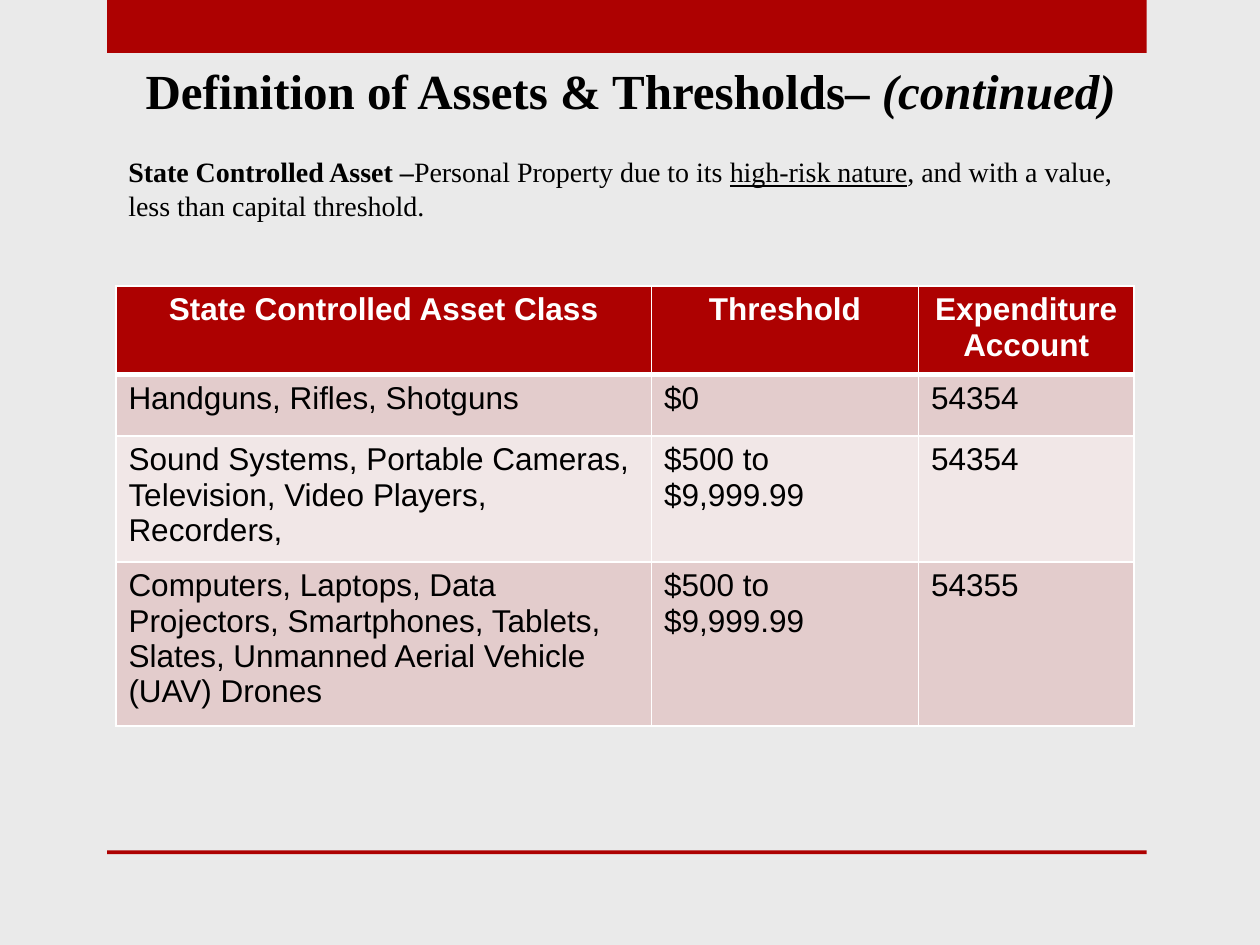
from typing import NamedTuple

from lxml import etree
from pptx import Presentation
from pptx import util as u
from pptx.dml.color import RGBColor
from pptx.enum import shapes, text
from pptx.oxml import ns

RED, WHITE, BLACK = "AD0101", "FFFFFF", "000000"
BANDS = ("E3CCCC", "F1E7E7")
SERIF, SANS = "Times New Roman", "Arial"
COL_WIDTHS = (4.25, 2.12, 1.71)
ROW_HEIGHTS = (0.69, 0.49, 1.0, 1.3)
ROWS = (
    ("State Controlled Asset Class", "Threshold", "Expenditure Account"),
    ("Handguns, Rifles, Shotguns", "$0", "54354"),
    ("Sound Systems, Portable Cameras, Television, Video Players, Recorders,",
     "$500 to $9,999.99", "54354"),
    ("Computers, Laptops, Data Projectors, Smartphones, Tablets, Slates, "
     "Unmanned Aerial Vehicle (UAV) Drones", "$500 to $9,999.99", "54355"),
)


class Run(NamedTuple):
    text: str
    bold: bool = False
    italic: bool = False
    underline: bool = False


def paint(fill, color: str) -> None:
    fill.solid()
    fill.fore_color.rgb = RGBColor.from_string(color)


def style(font, name: str, size: float, color: str, bold: bool) -> None:
    font.name, font.size, font.bold = name, u.Pt(size), bold
    font.color.rgb = RGBColor.from_string(color)


def add_bar(s, top: float, height: float) -> None:
    sp = s.shapes.add_shape(shapes.MSO_SHAPE.RECTANGLE, u.Inches(0.85),
                            u.Inches(top), u.Inches(8.25), u.Inches(height))
    sp.shadow.inherit = False
    paint(sp.fill, RED)
    sp.line.fill.background()


def add_text(s, top: float, height: float, size: float, runs: list[Run],
             align=text.PP_ALIGN.LEFT) -> None:
    sp = s.shapes.add_textbox(u.Inches(0.92), u.Inches(top),
                              u.Inches(8.17), u.Inches(height))
    tf = sp.text_frame
    tf.word_wrap = True
    p = tf.paragraphs[0]
    p.alignment = align
    for run in runs:
        r = p.add_run()
        r.text = run.text
        style(r.font, SERIF, size, BLACK, run.bold)
        r.font.italic, r.font.underline = run.italic, run.underline


def set_borders(cell, top: float, bottom: float) -> None:
    """Draw white cell borders; top and bottom are widths in points."""
    tc_pr = cell._tc.get_or_add_tcPr()
    widths = {"lnL": 1, "lnR": 1, "lnT": top, "lnB": bottom}
    for i, (side, width) in enumerate(widths.items()):
        ln = etree.Element(ns.qn(f"a:{side}"), w=str(u.Pt(width)))
        fill = etree.SubElement(ln, ns.qn("a:solidFill"))
        etree.SubElement(fill, ns.qn("a:srgbClr"), val=WHITE)
        tc_pr.insert(i, ln)


def add_asset_table(s) -> None:
    table = s.shapes.add_table(
        len(ROWS), len(COL_WIDTHS), u.Inches(0.92), u.Inches(2.27),
        u.Inches(sum(COL_WIDTHS)), u.Inches(sum(ROW_HEIGHTS))).table
    for column, width in zip(table.columns, COL_WIDTHS):
        column.width = u.Inches(width)
    for i, (height, values) in enumerate(zip(ROW_HEIGHTS, ROWS)):
        table.rows[i].height = u.Inches(height)
        header = i == 0
        for j, value in enumerate(values):
            cell = table.cell(i, j)
            cell.text_frame.text = value
            p = cell.text_frame.paragraphs[0]
            p.alignment = text.PP_ALIGN.CENTER if header else text.PP_ALIGN.LEFT
            style(p.runs[0].font, SANS, 18, WHITE if header else BLACK, header)
            paint(cell.fill, RED if header else BANDS[(i - 1) % 2])
            set_borders(cell, top=3 if i == 1 else 1, bottom=3 if header else 1)


def main() -> None:
    prs = Presentation()
    prs.slide_width, prs.slide_height = u.Inches(10), u.Inches(7.5)
    s = prs.slides.add_slide(prs.slide_layouts[6])
    paint(s.background.fill, "EAEAEA")
    add_bar(s, 0, 0.42)
    add_bar(s, 6.75, 0.03)
    add_text(s, 0.43, 0.57, 28, [
        Run("Definition of Assets & Thresholds– ", bold=True),
        Run("(continued)", bold=True, italic=True),
    ], text.PP_ALIGN.CENTER)
    add_text(s, 1.18, 1.19, 16, [
        Run("State Controlled Asset –", bold=True),
        Run("Personal Property due to its "),
        Run("high-risk nature", underline=True),
        Run(", and with a value, less than capital threshold."),
    ])
    add_asset_table(s)
    prs.save("out.pptx")


if __name__ == "__main__":
    main()
